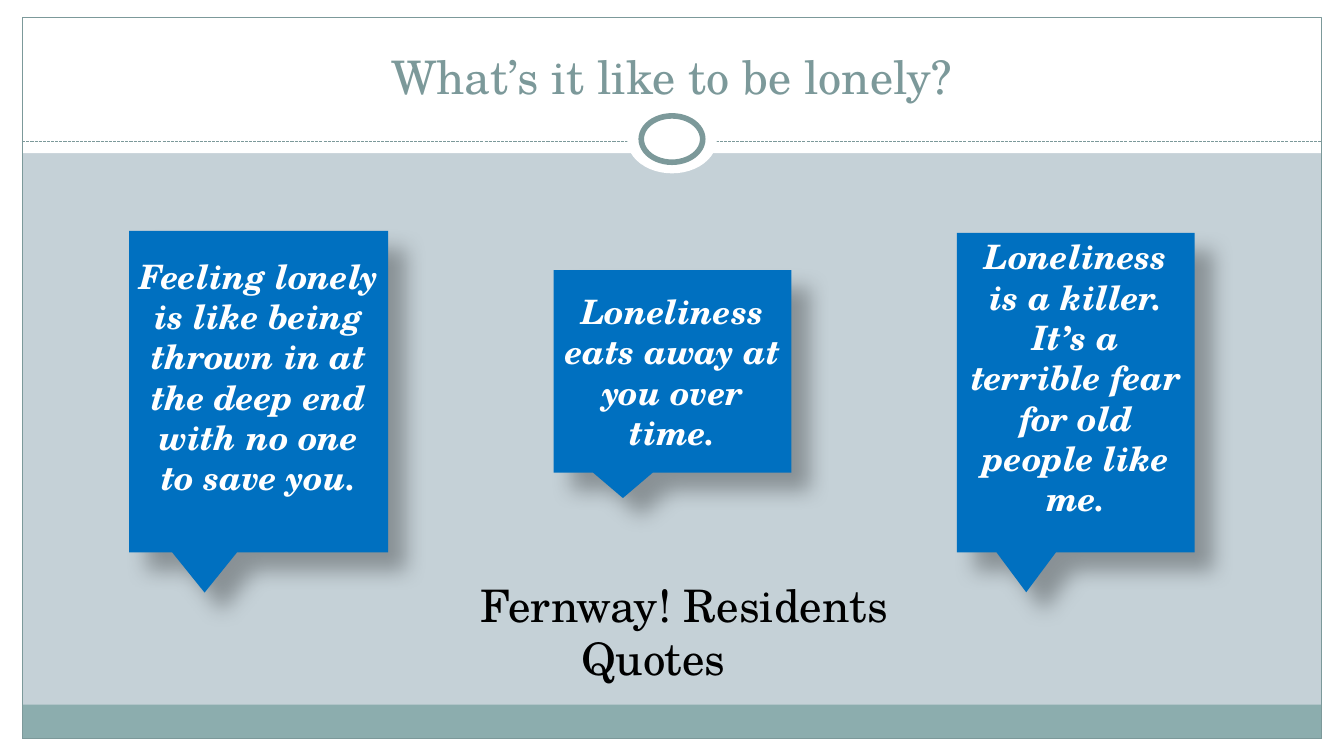
from dataclasses import dataclass
from typing import Optional

import lxml.etree
import pptx
import pptx.dml.color
import pptx.enum.dml
import pptx.enum.shapes
import pptx.enum.text
import pptx.oxml
import pptx.oxml.ns
import pptx.util

Inches = pptx.util.Inches
Pt = pptx.util.Pt
RGBColor = pptx.dml.color.RGBColor
Shape = pptx.enum.shapes.MSO_SHAPE
Anchor = pptx.enum.text.MSO_ANCHOR

FONT = "TeX Gyre Schola"
WHITE = RGBColor(0xFF, 0xFF, 0xFF)
BLACK = RGBColor(0, 0, 0)
MIST = RGBColor(0xC5, 0xD1, 0xD7)
SAGE = RGBColor(0x8C, 0xAD, 0xAE)
TEAL = RGBColor(0x7C, 0x99, 0x9A)
BLUE = RGBColor(0x00, 0x70, 0xC0)

WIDTH, HEIGHT = 13.33, 7.5
MARGIN, EDGE = 0.22, 0.17
INNER = WIDTH - 2 * MARGIN


@dataclass(frozen=True)
class Panel:
    left: float
    top: float
    width: float
    height: float
    fill: Optional[RGBColor] = WHITE
    line_width: float = 0
    kind: Shape = Shape.RECTANGLE


@dataclass(frozen=True)
class Quote:
    left: float
    top: float
    width: float
    height: float
    text: str
    space_below: float = 0.05


PANELS = [
    Panel(0, HEIGHT - EDGE, WIDTH, EDGE),
    Panel(0, 0, WIDTH, 1.52),
    Panel(0, 0, MARGIN, HEIGHT),
    Panel(WIDTH - MARGIN, 0, MARGIN, HEIGHT),
    Panel(MARGIN, 6.99, INNER, 0.34, SAGE),
    Panel(MARGIN, EDGE, INNER, HEIGHT - 2 * EDGE, None, 0.75),
]
RINGS = [
    Panel(6.22, 1.05, 0.89, 0.67, kind=Shape.OVAL),
    Panel(6.36, 1.15, 0.61, 0.46, line_width=4, kind=Shape.OVAL),
]
QUOTES = [
    Quote(5.49, 2.68, 2.36, 2.01, "Loneliness eats away at you over time."),
    Quote(9.49, 2.31, 2.36, 3.17,
          "Loneliness is a killer. It’s a terrible fear for old people like me.", 0.35),
    Quote(1.28, 2.29, 2.57, 3.19,
          "Feeling lonely is like being thrown in at the deep end with no one to save you.",
          0.35),
]


def write(shape, text: str, *, size: float, color: RGBColor, anchor=Anchor.MIDDLE,
          bold: bool = False, italic: bool = False, side: float = 0.1,
          below: float = 0.05, indent: float = 0) -> None:
    frame = shape.text_frame
    frame.word_wrap = True
    frame.auto_size = pptx.enum.text.MSO_AUTO_SIZE.NONE
    frame.vertical_anchor = anchor
    frame.margin_left = frame.margin_right = Inches(side)
    frame.margin_top, frame.margin_bottom = Inches(0.05), Inches(below)
    paragraph = frame.paragraphs[0]
    paragraph.alignment = pptx.enum.text.PP_ALIGN.CENTER
    if indent:
        paragraph._p.get_or_add_pPr().set("indent", str(Inches(indent)))
    run = paragraph.add_run()
    run.text = text
    run.font.name = FONT
    run.font.size = Pt(size)
    run.font.bold, run.font.italic = bold, italic
    run.font.color.rgb = color


def draw_panel(slide, panel: Panel):
    shape = slide.shapes.add_shape(panel.kind, Inches(panel.left), Inches(panel.top),
                                   Inches(panel.width), Inches(panel.height))
    shape.shadow.inherit = False
    if panel.fill is None:
        shape.fill.background()
    else:
        shape.fill.solid()
        shape.fill.fore_color.rgb = panel.fill
    if panel.line_width:
        shape.line.color.rgb = TEAL
        shape.line.width = Pt(panel.line_width)
    else:
        shape.line.fill.background()
    return shape


def draw_divider(slide) -> None:
    divider = slide.shapes.add_connector(
        pptx.enum.shapes.MSO_CONNECTOR.STRAIGHT,
        Inches(MARGIN), Inches(1.4), Inches(MARGIN + INNER), Inches(1.4))
    divider.line.color.rgb = TEAL
    divider.line.width = Pt(0.75)
    divider.line.dash_style = pptx.enum.dml.MSO_LINE.SQUARE_DOT
    lxml.etree.SubElement(divider._element.spPr, pptx.oxml.ns.qn("a:effectLst"))


def cast_shadow(shape) -> None:
    effects = shape._element.spPr.find(pptx.oxml.ns.qn("a:effectLst"))
    effects.append(pptx.oxml.parse_xml(
        f'<a:outerShdw {pptx.oxml.ns.nsdecls("a")} blurRad="{Pt(15)}" dist="{Pt(18)}" '
        f'dir="{45 * 60000}" algn="tl" rotWithShape="0"><a:srgbClr val="{BLACK}">'
        '<a:alpha val="30000"/></a:srgbClr></a:outerShdw>'))


def draw_quote(slide, quote: Quote) -> None:
    callout = draw_panel(slide, Panel(quote.left, quote.top, quote.width, quote.height,
                                      BLUE, kind=Shape.RECTANGULAR_CALLOUT))
    cast_shadow(callout)
    write(callout, quote.text, size=24, color=WHITE, bold=True, italic=True,
          below=quote.space_below)


def main() -> None:
    deck = pptx.Presentation()
    deck.slide_width, deck.slide_height = Inches(WIDTH), Inches(HEIGHT)
    slide = deck.slides.add_slide(deck.slide_layouts[5])
    slide.background.fill.solid()
    slide.background.fill.fore_color.rgb = MIST

    for panel in PANELS:
        draw_panel(slide, panel)
    draw_divider(slide)
    for ring in RINGS:
        draw_panel(slide, ring)

    heading = slide.shapes.title
    heading.left, heading.top = Inches(0.44), Inches(0.25)
    heading.width, heading.height = Inches(12.44), Inches(0.83)
    write(heading, "What’s it like to be lonely?", size=33, color=TEAL,
          anchor=Anchor.BOTTOM)
    slide.shapes._spTree.append(heading._element)

    for quote in QUOTES:
        draw_quote(slide, quote)

    attribution = slide.shapes.add_textbox(Inches(3.27), Inches(5.94),
                                           Inches(6.42), Inches(0.64))
    write(attribution, "Fernway! Residents Quotes", size=32, color=BLACK,
          side=0.4, indent=0.61)
    deck.save("out.pptx")


if __name__ == "__main__":
    main()
